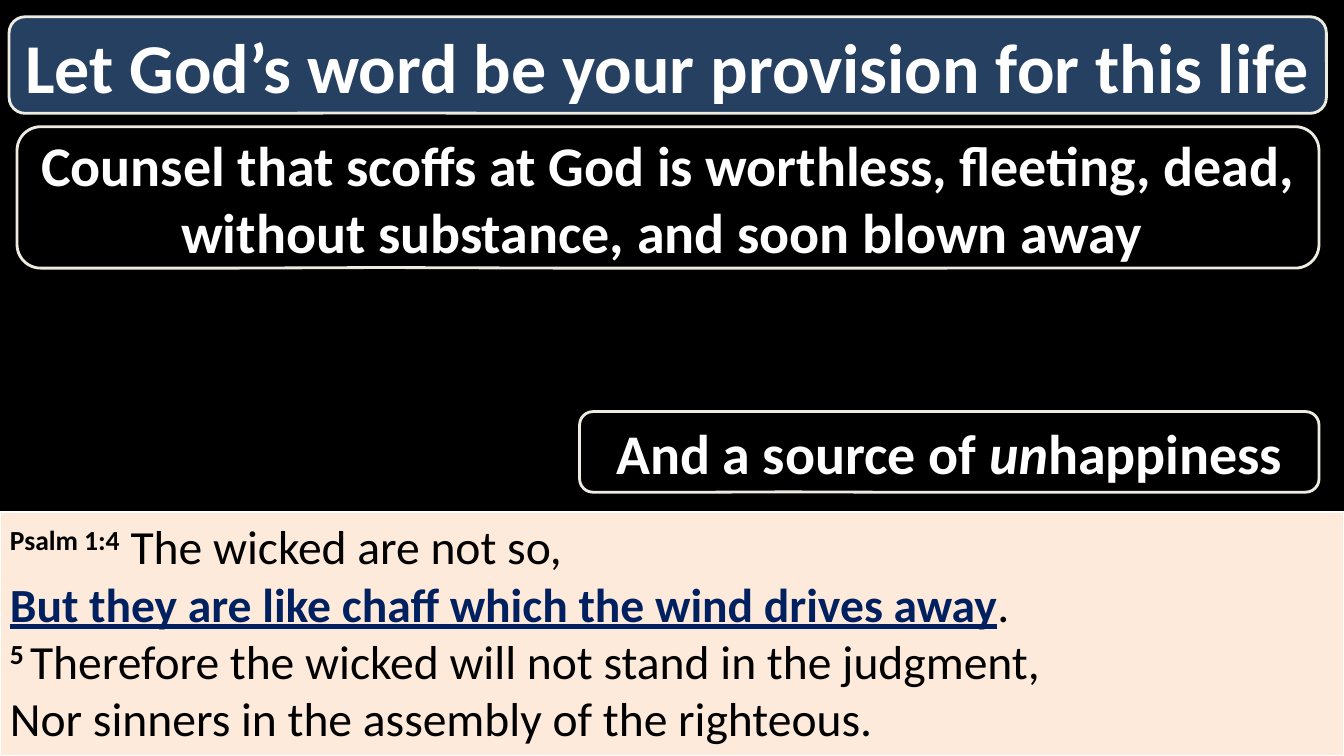
from lxml.etree import SubElement
from pptx import Presentation
from pptx.dml.color import RGBColor
from pptx.enum.shapes import MSO_SHAPE
from pptx.enum.text import MSO_ANCHOR, PP_ALIGN
from pptx.oxml.ns import qn
from pptx.util import Pt


def color(hex_value):
    return RGBColor.from_string(hex_value)


class VerseSlide:
    font = "Calibri"
    white, black = "FFFFFF", "000000"
    navy, blue = "002060", "254061"
    ivory, peach = "EEECE1", "FDEADA"

    def __init__(self, prs):
        self.s = prs.slides.add_slide(prs.slide_layouts[6])
        fill = self.s.background.fill
        fill.solid()
        fill.fore_color.rgb = color(self.black)

    def shape(self, kind, box, fill, line, width):
        sp = self.s.shapes.add_shape(kind, *[Pt(v) for v in box])
        sp.shadow.inherit = False
        sp.fill.solid()
        sp.fill.fore_color.rgb = color(fill)
        sp.line.color.rgb = color(line)
        sp.line.width = Pt(width)
        sp.text_frame.word_wrap = True
        return sp

    def run(self, p, text, size, ink, bold=False, italic=False,
            underline=False, raised=False):
        r = p.add_run()
        r.text = text
        f = r.font
        f.name, f.size, f.color.rgb = self.font, Pt(size), color(ink)
        f.bold, f.italic, f.underline = bold, italic, underline
        if raised:
            f._element.set("baseline", "30000")

    def callout(self, box, runs, size, fill, opacity=100):
        sp = self.shape(MSO_SHAPE.ROUNDED_RECTANGULAR_CALLOUT, box, fill, self.ivory, 2)
        for i, value in enumerate((-0.219, 0.496, 0.167)):
            sp.adjustments[i] = value
        if opacity < 100:
            srgb = sp.fill._xPr.find(".//" + qn("a:srgbClr"))
            SubElement(srgb, qn("a:alpha"), val=str(opacity * 1000))
        tf = sp.text_frame
        tf.vertical_anchor = MSO_ANCHOR.MIDDLE
        p = tf.paragraphs[0]
        p.alignment = PP_ALIGN.CENTER
        for text, italic in runs:
            self.run(p, text, size, self.white, bold=True, italic=italic)

    def passage(self, box, lines, size):
        sp = self.shape(MSO_SHAPE.RECTANGLE, box, self.peach, self.white, 1.5)
        tf = sp.text_frame
        tf.vertical_anchor = MSO_ANCHOR.TOP
        for i, runs in enumerate(lines):
            p = tf.paragraphs[0] if i == 0 else tf.add_paragraph()
            p.alignment = PP_ALIGN.LEFT
            for text, style in runs:
                self.run(p, text, size, **{"ink": self.black, **style})


def main():
    prs = Presentation()
    prs.slide_width, prs.slide_height = Pt(960), Pt(540)
    slide = VerseSlide(prs)

    # Title
    slide.callout((6.5, 12, 941, 69),
                  [("Let God’s word be your provision for this life ", False)],
                  50, slide.blue)

    # Bible passage
    plain = {}
    number = {"bold": True, "raised": True}
    key = {"ink": slide.navy, "bold": True, "underline": True}
    slide.passage((0, 366, 960, 174), [
        [("Psalm 1:4", number), (" The wicked are not so,", plain)],
        [("But they are like chaff which the wind drives away", key), (".", plain)],
        [("5 ", number), ("Therefore the wicked will not stand in the judgment,", plain)],
        [("Nor sinners in the assembly of the righteous.", plain)],
    ], 34)

    # Translucent statements
    slide.callout((12.2, 90.5, 930, 101),
                  [("Counsel that scoffs at God is worthless, fleeting, dead, "
                    "without substance, and soon blown away ", False)],
                  40, slide.black, opacity=48)
    slide.callout((414, 294, 528.2, 57.6),
                  [("And a source of ", False), ("un", True), ("happiness", False)],
                  40, slide.black, opacity=48)

    prs.save("out.pptx")


if __name__ == "__main__":
    main()
